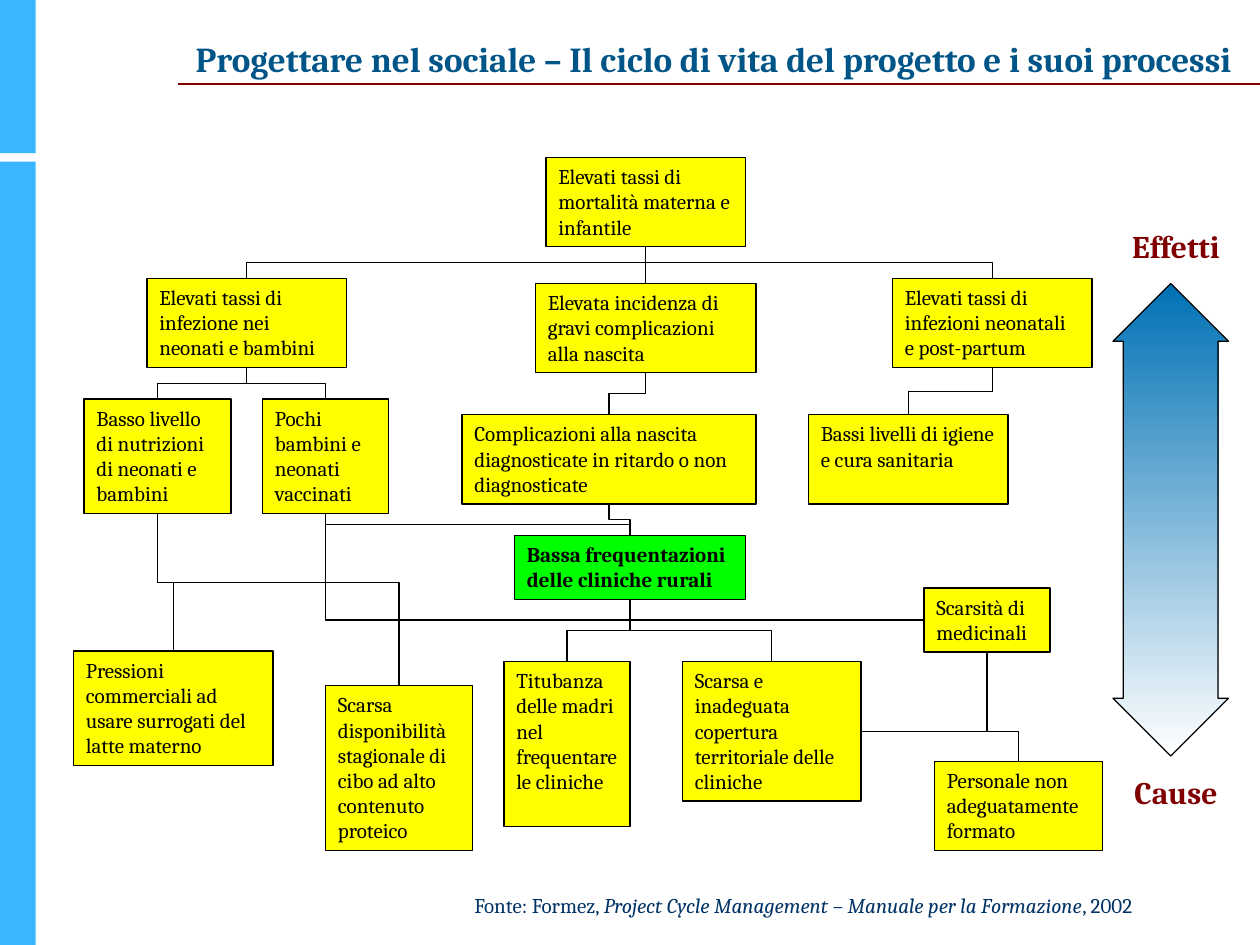
from lxml.etree import SubElement
from pptx import Presentation
from pptx.dml.color import RGBColor
from pptx.enum.shapes import MSO_CONNECTOR, MSO_SHAPE
from pptx.enum.text import MSO_ANCHOR, MSO_AUTO_SIZE, PP_ALIGN
from pptx.oxml.ns import qn
from pptx.util import Inches, Pt

deck = Presentation()
deck.slide_width, deck.slide_height = Inches(10), Inches(7.5)
slide = deck.slides.add_slide(deck.slide_layouts[6])
shapes = slide.shapes
unit = deck.slide_width / 120
tone = RGBColor.from_string


def write(shape, runs, size, color, align=PP_ALIGN.LEFT, wrap=True):
    frame = shape.text_frame
    frame.word_wrap = wrap
    frame.auto_size = MSO_AUTO_SIZE.SHAPE_TO_FIT_TEXT
    frame.vertical_anchor = MSO_ANCHOR.TOP
    para = frame.paragraphs[0]
    para.alignment = align
    for text, bold, slant in runs:
        run = para.add_run()
        run.text = text
        font = run.font
        font.name, font.size, font.bold, font.italic = "Cambria", Pt(size), bold, slant
        font.color.rgb = tone(color)


def style(line, color="000000", width=0.75):
    line.line.color.rgb = tone(color)
    line.line.width = Pt(width)
    SubElement(line._element.spPr, qn("a:effectLst"))


for top, high in [(15.4, 74.6), (0, 14.6)]:
    bar = shapes.add_shape(MSO_SHAPE.RECTANGLE, 0, int(top * unit), int(3.4 * unit), int(high * unit))
    bar.shadow.inherit = False
    bar.fill.solid()
    bar.fill.fore_color.rgb = tone("3AB5FF")
    bar.line.fill.background()

rule = shapes.add_connector(MSO_CONNECTOR.STRAIGHT, int(17 * unit), int(8 * unit),
                            deck.slide_width, int(8 * unit))
style(rule, "800000", 1.5)

labels = [
    (16, 3, 104, 4.8, 20, "005588", PP_ALIGN.CENTER, False,
     [("Progettare nel sociale – Il ciclo di vita del progetto e i suoi processi", True, False)]),
    (44, 84.4, 71, 3.6, 12, "003366", PP_ALIGN.LEFT, True,
     [("Fonte: Formez, ", False, False),
      ("Project Cycle Management – Manuale per la Formazione", False, True),
      (", 2002", False, False)]),
    (104, 21, 16, 4.8, 18, "800000", PP_ALIGN.CENTER, True, [("Effetti", True, False)]),
    (104, 73, 16, 4.8, 18, "800000", PP_ALIGN.CENTER, True, [("Cause", True, False)]),
]
for left, top, wide, high, size, color, align, wrap, runs in labels:
    label = shapes.add_textbox(*(int(n * unit) for n in (left, top, wide, high)))
    write(label, runs, size, color, align, wrap)

nodes = [
    ("death", 52, 15, 19, 3, "Elevati tassi di mortalità materna e infantile"),
    ("child", 14, 26.5, 19, 3, "Elevati tassi di infezione nei neonati e bambini"),
    ("birth", 51, 27, 21, 3, "Elevata incidenza di gravi complicazioni alla nascita"),
    ("germs", 85, 26.5, 19, 3, "Elevati tassi di infezioni neonatali e post-partum"),
    ("food", 8, 38, 14, 4, "Basso livello di nutrizioni di neonati e bambini"),
    ("shots", 25, 38, 12, 4, "Pochi bambini e neonati vaccinati"),
    ("late", 44, 39.5, 28, 3, "Complicazioni alla nascita diagnosticate in ritardo o non diagnosticate"),
    ("clean", 77, 39.5, 19, 3, "Bassi livelli di igiene e cura sanitaria"),
    ("core", 49, 51, 22, 2, "Bassa frequentazioni delle cliniche rurali"),
    ("milk", 7, 62, 19, 4, "Pressioni commerciali ad usare surrogati del latte materno"),
    ("stock", 31, 65.3, 14, 6, "Scarsa disponibilità stagionale di cibo ad alto contenuto proteico"),
    ("doubt", 48, 63, 12, 6, "Titubanza delle madri nel frequentare le cliniche"),
    ("cover", 65, 63, 17, 5, "Scarsa e inadeguata copertura territoriale delle cliniche"),
    ("drugs", 88, 56, 12, 2, "Scarsità di medicinali"),
    ("staff", 89, 72.5, 16, 3, "Personale non adeguatamente formato"),
]
boxes = {}
for name, left, top, wide, rows, text in nodes:
    box = shapes.add_shape(MSO_SHAPE.RECTANGLE, int(left * unit), int(top * unit),
                           int(wide * unit), int((1.3 + 2.4 * rows) * unit))
    core = name == "core"
    box.shadow.inherit = False
    box.fill.solid()
    box.fill.fore_color.rgb = tone("00FF00" if core else "FFFF00")
    box.line.color.rgb = tone("000000")
    box.line.width = Pt(0.75)
    write(box, [(text, core, False)], 12, "000000")
    boxes[name] = box

stem = shapes.add_connector(MSO_CONNECTOR.STRAIGHT, 0, 0, 0, 0)
stem.begin_connect(boxes["birth"], 0)
stem.end_connect(boxes["death"], 2)
style(stem)

links = [
    ("child", 0, "death", 2, 0.5), ("germs", 0, "death", 2, 0.5),
    ("food", 0, "child", 2, 0.5), ("shots", 0, "child", 2, 0.5),
    ("late", 0, "birth", 2, 0.5), ("clean", 0, "germs", 2, 0.5),
    ("core", 0, "late", 2, 0.5), ("core", 0, "shots", 2, 0.5),
    ("shots", 2, "drugs", 1, None), ("stock", 0, "food", 2, 0.6),
    ("milk", 0, "food", 2, 0.5), ("doubt", 0, "core", 2, 0.5),
    ("cover", 0, "core", 2, 0.5), ("cover", 3, "drugs", 2, None),
    ("staff", 0, "drugs", 2, 0.27),
]
for start, exit, goal, entry, bend in links:
    link = shapes.add_connector(MSO_CONNECTOR.ELBOW, 0, 0, 0, 0)
    link.begin_connect(boxes[start], exit)
    link.end_connect(boxes[goal], entry)
    style(link)
    geom = link._element.spPr.find(qn("a:prstGeom"))
    if bend is None:
        geom.set("prst", "bentConnector2")
    else:
        SubElement(geom.find(qn("a:avLst")), qn("a:gd"), name="adj1", fmla=f"val {int(bend * 100000)}")
    if exit != 3:
        run, rise = link.end_x - link.begin_x, link.end_y - link.begin_y
        midx, midy = (link.begin_x + link.end_x) // 2, (link.begin_y + link.end_y) // 2
        link.width, link.height = abs(rise), abs(run)
        link.left, link.top = midx - abs(rise) // 2, midy - abs(run) // 2
        form = link._element.spPr.find(qn("a:xfrm"))
        form.set("rot", str((270 if run > 0 else 90) * 60000))
        form.set("flipH", "1" if (run < 0) != (rise > 0) else "0")
        form.set("flipV", "0")

arrow = shapes.add_shape(MSO_SHAPE.UP_DOWN_ARROW, *(int(n * unit) for n in (106, 27, 11, 45)))
arrow.adjustments[0], arrow.adjustments[1] = 0.5, 0.82
arrow.shadow.inherit = False
arrow.fill.gradient()
arrow.fill.gradient_angle = 270
for stop, color in zip(arrow.fill.gradient_stops, ("0071B5", "FFFFFF")):
    stop.color.rgb = tone(color)
arrow.line.color.rgb = tone("000000")
arrow.line.width = Pt(0.75)

deck.save("out.pptx")
